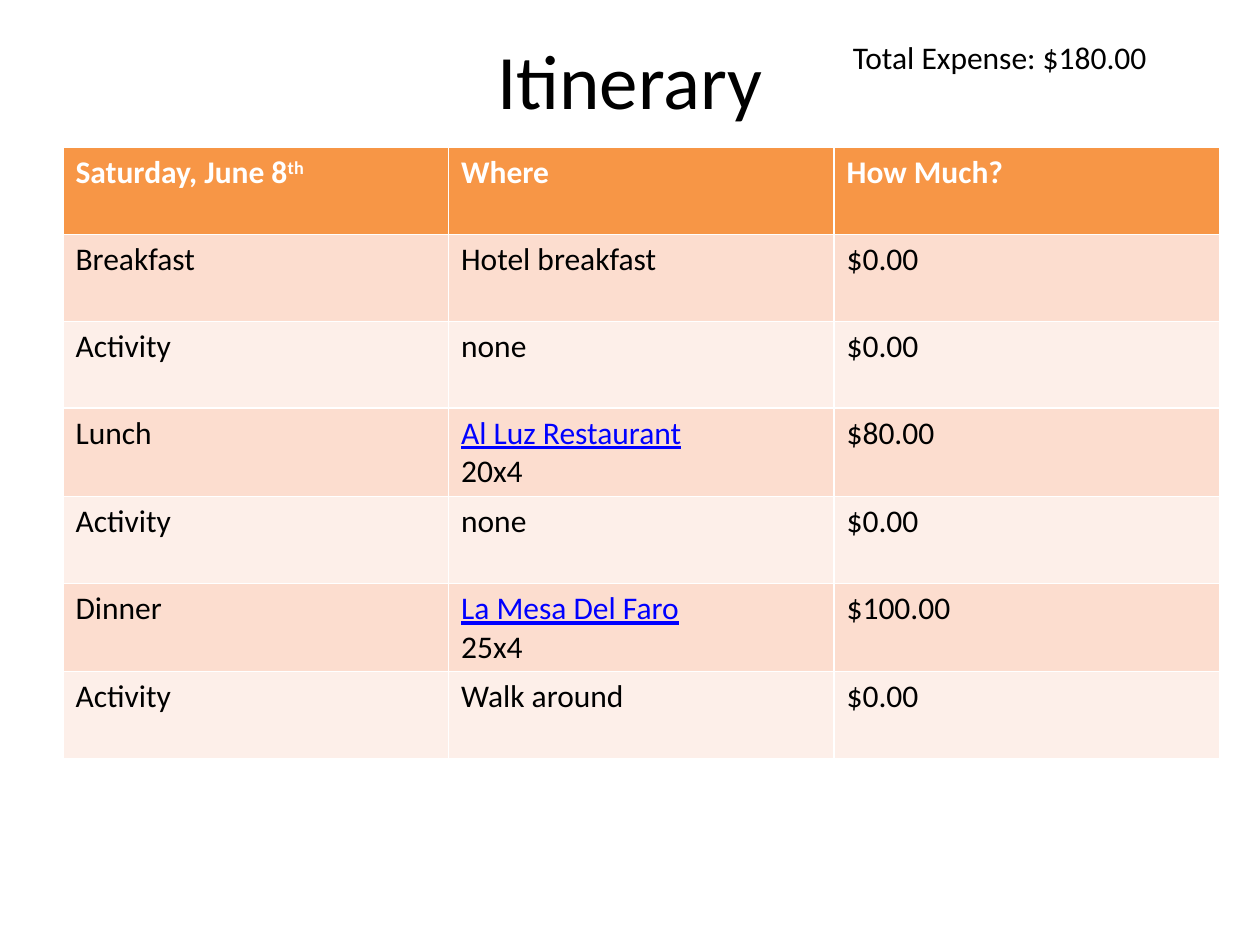
from pptx import Presentation
from pptx.dml.color import RGBColor
from pptx.enum.text import MSO_ANCHOR, PP_ALIGN
from pptx.util import Inches, Pt

CENTER = PP_ALIGN.CENTER
MIDDLE = MSO_ANCHOR.MIDDLE
BLACK = RGBColor(0x00, 0x00, 0x00)
WHITE = RGBColor(0xFF, 0xFF, 0xFF)
BLUE = RGBColor(0x00, 0x00, 0xFF)
ORANGE = RGBColor(0xF7, 0x96, 0x46)
PEACH = RGBColor(0xFC, 0xDD, 0xCF)
PALE = RGBColor(0xFD, 0xEF, 0xE9)

TITLE = "Itinerary"
TOTAL = "Total Expense: $180.00"
HEADER = ["Saturday, June 8", "Where", "How Much?"]
ORDINAL = "th"
PLANS = [
    ("Breakfast", "Hotel breakfast", "$0.00"),
    ("Activity", "none", "$0.00"),
    ("Lunch", "Al Luz Restaurant\n20x4", "$80.00"),
    ("Activity", "none", "$0.00"),
    ("Dinner", "La Mesa Del Faro\n25x4", "$100.00"),
    ("Activity", "Walk around", "$0.00"),
]
ROW_HEIGHT, COL_WIDTH = 0.69, 3.06

BODY = {"name": "Calibri", "size": Pt(18), "bold": False}
HEAD = {**BODY, "bold": True}
LINK = {**BODY, "underline": True}
HEADING = {**BODY, "size": Pt(44)}


def add_run(p, text, style, color):
    r = p.add_run()
    r.text = text
    for name, value in style.items():
        setattr(r.font, name, value)
    r.font.color.rgb = color
    return r


def fill_cell(cell, text, style, color, fill):
    cell.fill.solid()
    cell.fill.fore_color.rgb = fill
    first, *rest = text.split("\n")
    tf = cell.text_frame
    if rest:
        add_run(tf.paragraphs[0], first, LINK, BLUE)
    else:
        add_run(tf.paragraphs[0], first, style, color)
    for line in rest:
        add_run(tf.add_paragraph(), line, style, color)


prs = Presentation()
prs.slide_width, prs.slide_height = Inches(10), Inches(7.5)
s = prs.slides.add_slide(prs.slide_layouts[5])

title = s.shapes.title
title.left, title.top = Inches(0.5), Inches(0)
title.width, title.height = Inches(9), Inches(1.25)
tf = title.text_frame
tf.vertical_anchor = MIDDLE
tf.paragraphs[0].alignment = CENTER
add_run(tf.paragraphs[0], TITLE, HEADING, BLACK)

total = s.shapes.add_textbox(Inches(6.67), Inches(0.25), Inches(3.08), Inches(0.4))
total.text_frame.word_wrap = True
add_run(total.text_frame.paragraphs[0], TOTAL, BODY, BLACK)

n_rows, n_cols = len(PLANS) + 1, len(HEADER)
table = s.shapes.add_table(
    n_rows, n_cols, Inches(0.5), Inches(1.17),
    Inches(COL_WIDTH * n_cols), Inches(ROW_HEIGHT * n_rows),
).table
for col in table.columns:
    col.width = Inches(COL_WIDTH)
for row in table.rows:
    row.height = Inches(ROW_HEIGHT)

for j, text in enumerate(HEADER):
    fill_cell(table.cell(0, j), text, HEAD, WHITE, ORANGE)
ordinal = add_run(table.cell(0, 0).text_frame.paragraphs[0], ORDINAL, HEAD, WHITE)
ordinal.font._element.set("baseline", "30000")

for i, plan in enumerate(PLANS, 1):
    for j, text in enumerate(plan):
        fill_cell(table.cell(i, j), text, BODY, BLACK, PEACH if i % 2 else PALE)

prs.save("out.pptx")
